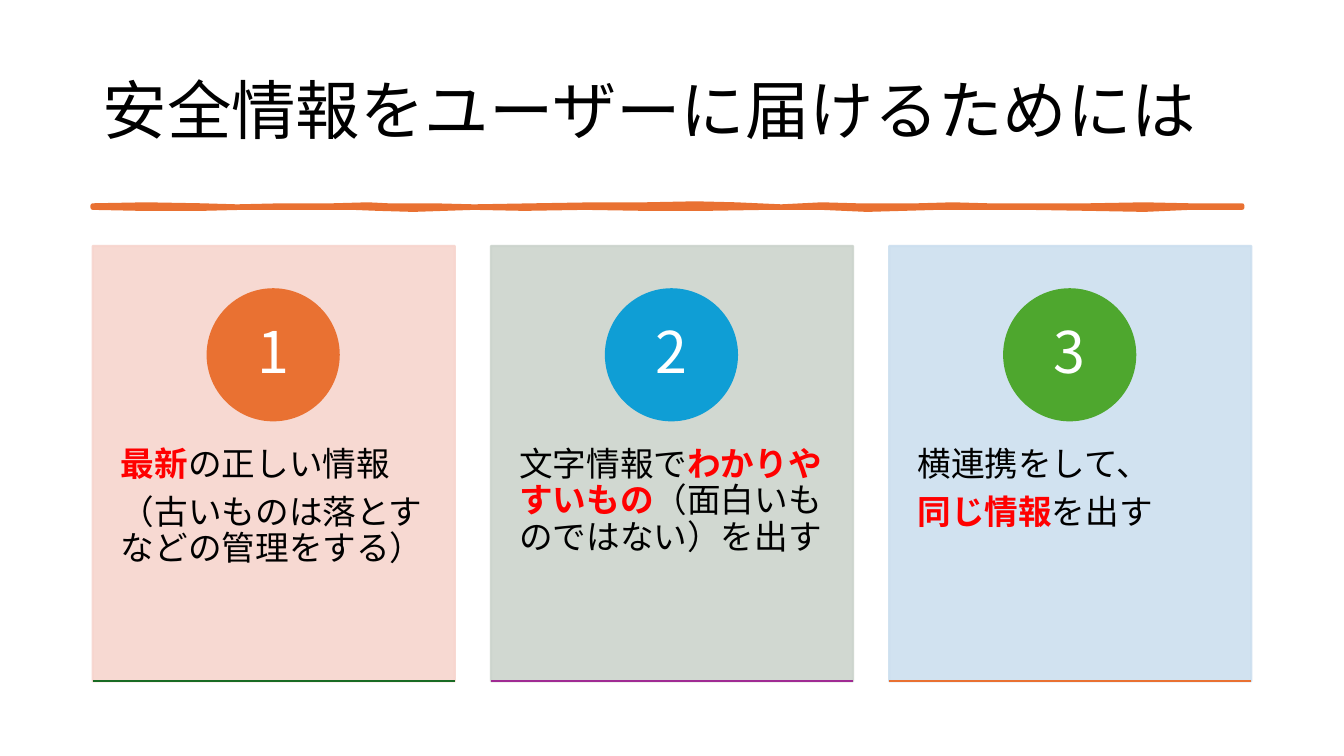
"""Build a slide with three numbered cards on getting safety information to users."""
import pptx
import pptx.dml.color
import pptx.enum.shapes
import pptx.enum.text
import pptx.oxml
import pptx.oxml.ns
import pptx.util

PX = 9144
FONT = "Noto Sans CJK JP"
COLORS = {
    "black": "000000",
    "white": "FFFFFF",
    "red": "FF0000",
    "orange": "E97132",
    "blue": "0F9ED5",
    "green": "4EA72E",
    "dark green": "196B24",
    "purple": "A02B93",
    "pale pink": "F7D5CE",
    "pale grey": "CCD4CD",
    "pale blue": "CCDFEF",
}
CARD_LEFT, CARD_TOP, CARD_WIDTH, CARD_HEIGHT, CARD_STEP = 92, 244, 359, 432, 395
CIRCLE_SIZE = 130
CARDS = [
    ("pale pink", "orange", "dark green", [
        [("最新", True), ("の正しい情報", False)],
        [("（古いものは落とすなどの管理をする）", False)],
    ]),
    ("pale grey", "blue", "purple", [
        [("文字情報で", False), ("わかりやすいもの", True),
         ("（面白いものではない）を出す", False)],
    ]),
    ("pale blue", "green", "orange", [
        [("横連携をして、", False)],
        [("同じ情報", True), ("を出す", False)],
    ]),
]
STROKE_TOP = [
    (92, 204), (145, 203), (200, 204), (235, 205), (280, 204), (330, 204),
    (365, 203), (385, 204), (430, 204), (470, 205), (530, 204), (590, 203),
    (640, 203), (690, 202), (730, 203), (775, 205), (815, 203), (850, 204),
    (910, 204), (945, 203), (980, 204), (1080, 204), (1135, 203),
    (1180, 204), (1232, 204),
]
STROKE_BOTTOM = [
    (1232, 206), (1180, 206), (1135, 208), (1080, 207), (1020, 206),
    (980, 206), (930, 206), (860, 208), (815, 206), (760, 206), (700, 207),
    (640, 207), (580, 206), (520, 207), (470, 206), (410, 208), (375, 207),
    (350, 206), (290, 206), (240, 206), (200, 207), (140, 207), (92, 206),
]


def px(*lengths):
    """Turn pixel lengths into EMU."""
    return [length * PX for length in lengths]


def rgb(name):
    """Look up a named colour."""
    return pptx.dml.color.RGBColor.from_string(COLORS[name])


def style_paragraph(para, size, color, align=pptx.enum.text.PP_ALIGN.LEFT, after=0):
    """Set spacing and font, for Latin and East Asian text, on a paragraph."""
    para.alignment = align
    para.line_spacing = 0.9
    para.space_after = pptx.util.Pt(after)
    para.font.size = pptx.util.Pt(size)
    para.font.name = FONT
    para.font.color.rgb = rgb(color)
    latin = para._p.pPr.find(".//" + pptx.oxml.ns.qn("a:latin"))
    latin.addnext(pptx.oxml.parse_xml(
        f'<a:ea {pptx.oxml.ns.nsdecls("a")} typeface="{FONT}"/>'))


def paint(shape, color, width, opacity=100):
    """Give a shape one colour for fill and line, without a shadow."""
    shape.shadow.inherit = False
    shape.fill.solid()
    shape.fill.fore_color.rgb = rgb(color)
    shape.line.color.rgb = rgb(color)
    shape.line.width = pptx.util.Pt(width)
    if opacity < 100:
        for tone in shape._element.spPr.iter(pptx.oxml.ns.qn("a:srgbClr")):
            tone.append(pptx.oxml.parse_xml(
                f'<a:alpha {pptx.oxml.ns.nsdecls("a")} val="{opacity * 1000}"/>'))


def add_title(page, text):
    """Place and fill the title."""
    title = page.shapes.title
    title.left, title.top, title.width, title.height = px(92, 40, 1150, 145)
    frame = title.text_frame
    frame.text = text
    frame.auto_size = pptx.enum.text.MSO_AUTO_SIZE.NONE
    frame.vertical_anchor = pptx.enum.text.MSO_ANCHOR.MIDDLE
    style_paragraph(frame.paragraphs[0], 46, "black")


def add_brush_stroke(page):
    """Draw the uneven stroke under the title."""
    builder = page.shapes.build_freeform(*STROKE_TOP[0], scale=PX)
    builder.add_line_segments(STROKE_TOP[1:] + STROKE_BOTTOM, close=True)
    paint(builder.convert_to_shape(), "orange", 3.25)


def add_card_text(page, left, paragraphs):
    """Write a card's paragraphs, with key words in bold red."""
    box = page.shapes.add_textbox(*px(left, 408, CARD_WIDTH, 259))
    frame = box.text_frame
    frame.word_wrap = True
    frame.margin_left, frame.margin_right = px(28, 28)
    frame.margin_top, frame.margin_bottom = px(36, 36)
    for index, spans in enumerate(paragraphs):
        para = frame.add_paragraph() if index else frame.paragraphs[0]
        style_paragraph(para, 24, "black", after=8.4)
        for text, is_key in spans:
            span = para.add_run()
            span.text = text
            if is_key:
                span.font.bold = True
                span.font.color.rgb = rgb("red")


def add_number(page, left, number, color):
    """Draw a numbered circle centred on a card."""
    circle = page.shapes.add_shape(
        pptx.enum.shapes.MSO_SHAPE.OVAL,
        *px(left + (CARD_WIDTH - CIRCLE_SIZE) // 2, 287, CIRCLE_SIZE, CIRCLE_SIZE))
    paint(circle, color, 1.5)
    frame = circle.text_frame
    frame.margin_top, frame.margin_bottom = px(1, 1)
    frame.vertical_anchor = pptx.enum.text.MSO_ANCHOR.MIDDLE
    frame.text = str(number)
    style_paragraph(frame.paragraphs[0], 41, "white", pptx.enum.text.PP_ALIGN.CENTER)


def add_base_line(page, left, color):
    """Draw the coloured line along a card's bottom edge."""
    bottom = CARD_TOP + CARD_HEIGHT
    line = page.shapes.add_connector(
        pptx.enum.shapes.MSO_CONNECTOR.STRAIGHT,
        *px(left, bottom, left + CARD_WIDTH, bottom))
    line.line.color.rgb = rgb(color)
    line.line.width = pptx.util.Pt(1.5)
    line._element.spPr.append(pptx.oxml.parse_xml(
        f'<a:effectLst {pptx.oxml.ns.nsdecls("a")}/>'))


def add_card(page, number, panel_color, circle_color, line_color, paragraphs):
    """Build one card at its place in the row."""
    left = CARD_LEFT + (number - 1) * CARD_STEP
    panel = page.shapes.add_shape(
        pptx.enum.shapes.MSO_SHAPE.RECTANGLE,
        *px(left, CARD_TOP, CARD_WIDTH, CARD_HEIGHT))
    paint(panel, panel_color, 1.5, opacity=90)
    add_card_text(page, left, paragraphs)
    add_number(page, left, number, circle_color)
    add_base_line(page, left, line_color)


def main():
    """Create the deck and save it."""
    deck = pptx.Presentation()
    deck.slide_width, deck.slide_height = px(1333, 750)
    page = deck.slides.add_slide(deck.slide_layouts.get_by_name("Title Only"))
    add_title(page, "安全情報をユーザーに届けるためには")
    add_brush_stroke(page)
    for number, card in enumerate(CARDS, start=1):
        add_card(page, number, *card)
    deck.save("out.pptx")


if __name__ == "__main__":
    main()
